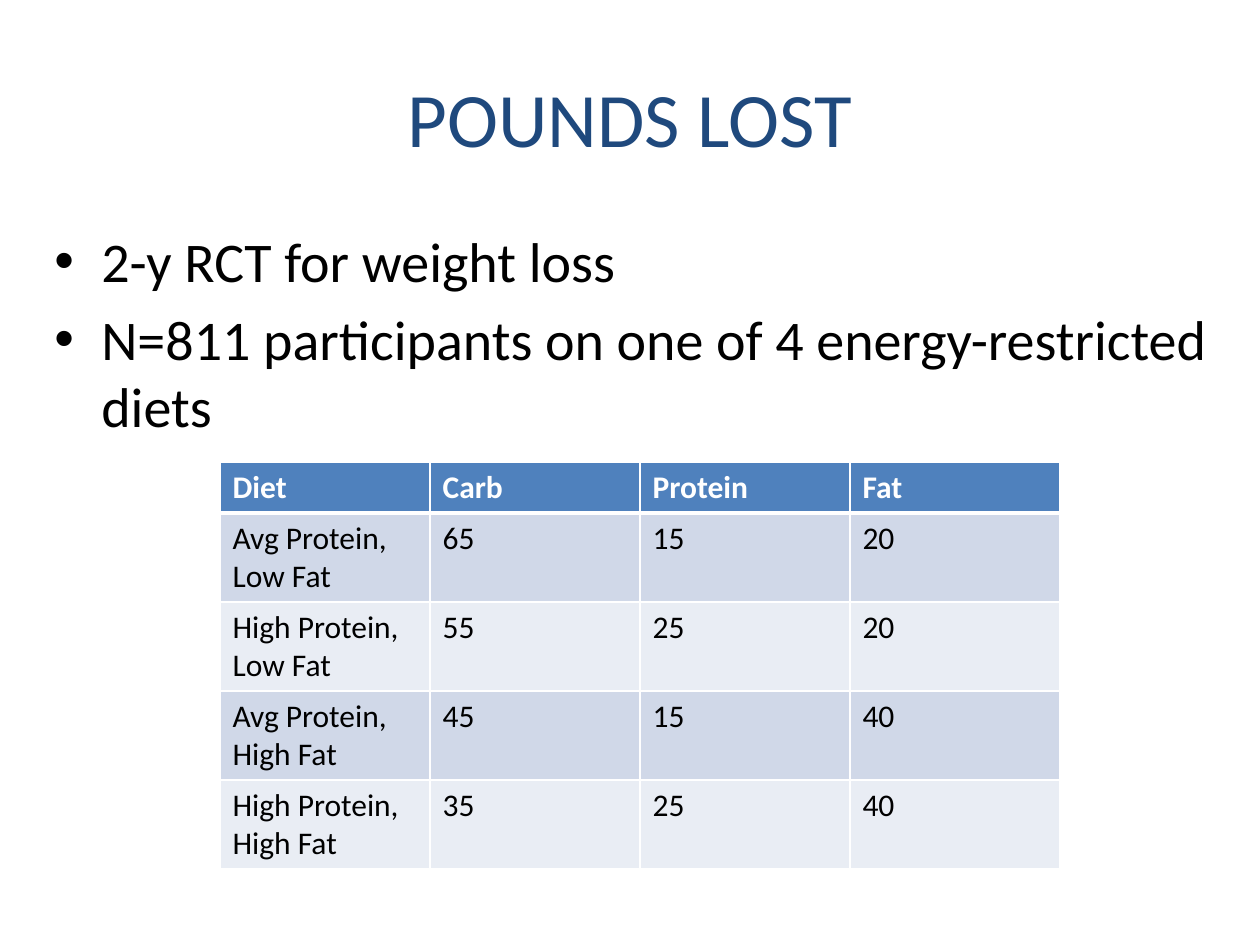
from dataclasses import dataclass

from lxml import etree
from pptx import Presentation
from pptx.dml.color import RGBColor
from pptx.enum.text import MSO_ANCHOR, PP_ALIGN
from pptx.oxml.ns import qn
from pptx.util import Emu, Pt

FONT = "Calibri"
NAVY = RGBColor(0x1F, 0x49, 0x7D)
BLUE = RGBColor(0x4F, 0x81, 0xBD)
DARK_BAND = RGBColor(0xD0, 0xD8, 0xE8)
PALE_BAND = RGBColor(0xE9, 0xED, 0xF4)
WHITE = RGBColor(0xFF, 0xFF, 0xFF)
BLACK = RGBColor(0, 0, 0)
LEFT, CENTER = PP_ALIGN.LEFT, PP_ALIGN.CENTER
TOP, MIDDLE = MSO_ANCHOR.TOP, MSO_ANCHOR.MIDDLE
INDENT = 47


def px(n: int) -> Emu:
    return Emu(round(n * 914400 / 126))


@dataclass
class Box:
    left: int
    top: int
    width: int
    height: int

    def emu(self) -> list[Emu]:
        return [px(n) for n in (self.left, self.top, self.width, self.height)]


@dataclass
class Style:
    size: int
    color: RGBColor
    bold: bool = False


@dataclass
class Diet:
    name: str
    carb: int
    protein: int
    fat: int

    def cells(self) -> list[str]:
        return [self.name, str(self.carb), str(self.protein), str(self.fat)]


BULLETS = [
    "2-y RCT for weight loss",
    "N=811 participants on one of 4 energy-restricted diets",
]
HEADS = ["Diet", "Carb", "Protein", "Fat"]
DIETS = [
    Diet("Avg Protein, Low Fat", 65, 15, 20),
    Diet("High Protein, Low Fat", 55, 25, 20),
    Diet("Avg Protein, High Fat", 45, 15, 40),
    Diet("High Protein, High Fat", 35, 25, 40),
]


def add_run(para, text: str, style: Style) -> None:
    run = para.add_run()
    run.text = text
    font = run.font
    font.name, font.size, font.bold = FONT, Pt(style.size), style.bold
    font.color.rgb = style.color


def add_bullet(para) -> None:
    para.space_before = Pt(6.4)
    props = para._p.get_or_add_pPr()
    props.set("marL", str(px(INDENT)))
    props.set("indent", str(-px(INDENT)))
    etree.SubElement(props, qn("a:buFont"), typeface="Arial")
    etree.SubElement(props, qn("a:buChar"), char="•")


def add_text(slide, box: Box, lines: list[str], style: Style,
             align=LEFT, anchor=TOP, bullet: bool = False) -> None:
    frame = slide.shapes.add_textbox(*box.emu()).text_frame
    frame.word_wrap = True
    frame.vertical_anchor = anchor
    for i, line in enumerate(lines):
        para = frame.add_paragraph() if i else frame.paragraphs[0]
        para.alignment = align
        if bullet:
            add_bullet(para)
        add_run(para, line, style)


def add_edges(cell, widths: dict[str, int]) -> None:
    props = cell._tc.get_or_add_tcPr()
    for i, (side, width) in enumerate(widths.items()):
        line = etree.Element(qn(f"a:ln{side}"), w=str(Pt(width)))
        fill = etree.SubElement(line, qn("a:solidFill"))
        etree.SubElement(fill, qn("a:srgbClr"), val=str(WHITE))
        props.insert(i, line)


def add_grid(slide, box: Box, rows: list[list[str]], head: int) -> None:
    table = slide.shapes.add_table(len(rows), len(rows[0]), *box.emu()).table
    body = (box.height - head) // (len(rows) - 1)
    for r, row in enumerate(rows):
        table.rows[r].height = px(body if r else head)
        band = DARK_BAND if r % 2 else PALE_BAND
        style = Style(18, BLACK) if r else Style(18, WHITE, True)
        for c, text in enumerate(row):
            cell = table.cell(r, c)
            cell.fill.solid()
            cell.fill.fore_color.rgb = band if r else BLUE
            add_edges(cell, {"L": 1, "R": 1, "T": 3 if r == 1 else 1,
                             "B": 1 if r else 3})
            add_run(cell.text_frame.paragraphs[0], text, style)


def main() -> None:
    deck = Presentation()
    deck.slide_width, deck.slide_height = px(1260), px(945)
    slide = deck.slides.add_slide(deck.slide_layouts[6])

    # Title
    add_text(slide, Box(63, 38, 1134, 157), ["POUNDS LOST"],
             Style(44, NAVY), CENTER, MIDDLE)

    # Study facts
    add_text(slide, Box(42, 220, 1197, 624), BULLETS,
             Style(32, BLACK), bullet=True)

    # Diet table
    rows = [HEADS] + [diet.cells() for diet in DIETS]
    add_grid(slide, Box(220, 462, 840, 407), rows, head=51)

    deck.save("out.pptx")


if __name__ == "__main__":
    main()
